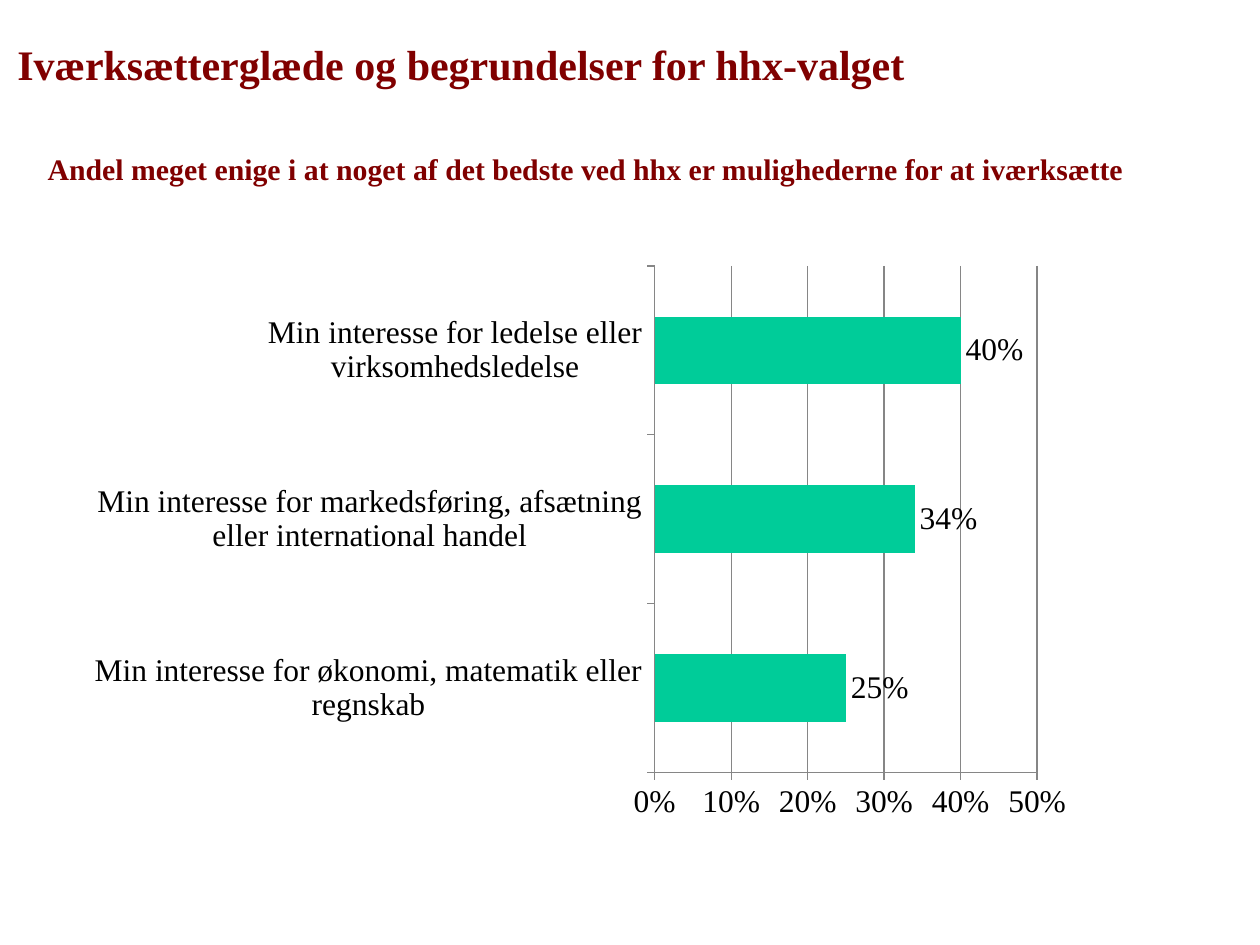
"""Build a slide with two headings and a bar chart of reasons for choosing hhx."""
from pptx import Presentation
from pptx.chart.data import CategoryChartData
from pptx.dml.color import RGBColor
from pptx.enum.chart import XL_CHART_TYPE, XL_LABEL_POSITION, XL_TICK_MARK
from pptx.util import Cm, Pt

FONT = "Times New Roman"
COLOURS = {"heading": "800000", "bar": "00CC99", "text": "000000", "line": "868686"}
HEADINGS = [
    ("Iværksætterglæde og begrundelser for hhx-valget", 24, (0.1, 0.66, 18.42, 1.27)),
    ("Andel meget enige i at noget af det bedste ved hhx er mulighederne for at iværksætte",
     17, (0.71, 2.92, 24.69, 1.7)),
]
REASONS = [
    ("Min interesse for økonomi, matematik eller regnskab", 0.25),
    ("Min interesse for markedsføring, afsætning eller international handel", 0.34),
    ("Min interesse for ledelse eller virksomhedsledelse", 0.40),
]
CHART_PLACE = (1.5, 5.13, 20.4, 11.61)


def colour(name):
    return RGBColor.from_string(COLOURS[name])


def style_font(font, size, name, bold=False):
    font.name, font.size, font.bold = FONT, Pt(size), bold
    font.color.rgb = colour(name)


def style_line(line):
    line.color.rgb = colour("line")
    line.width = Pt(0.75)


def add_heading(page, text, size, place):
    box = page.shapes.add_textbox(*map(Cm, place))
    box.text_frame.word_wrap = True
    paragraph = box.text_frame.paragraphs[0]
    paragraph.text = text
    style_font(paragraph.font, size, "heading", bold=True)


def add_reasons_chart(page):
    data = CategoryChartData(number_format="0%")
    data.categories = [reason for reason, share in REASONS]
    data.add_series("Series 1", [share for reason, share in REASONS])
    chart = page.shapes.add_chart(
        XL_CHART_TYPE.BAR_CLUSTERED, *map(Cm, CHART_PLACE), data).chart
    chart.has_legend = False
    chart.has_title = False
    style_font(chart.font, 18, "text")

    for axis in (chart.category_axis, chart.value_axis):
        axis.major_tick_mark = XL_TICK_MARK.OUTSIDE
        axis.minor_tick_mark = XL_TICK_MARK.NONE
        style_line(axis.format.line)
    values = chart.value_axis
    values.minimum_scale, values.maximum_scale, values.major_unit = 0, 0.5, 0.1
    values.has_major_gridlines = True
    style_line(values.major_gridlines.format.line)
    values.tick_labels.number_format = "0%"
    values.tick_labels.number_format_is_linked = False

    plot = chart.plots[0]
    plot.gap_width = 150
    plot.vary_by_categories = False
    bars = plot.series[0]
    bars.format.fill.solid()
    bars.format.fill.fore_color.rgb = colour("bar")
    labels = bars.data_labels
    labels.show_value = True
    labels.number_format = "0%"
    labels.number_format_is_linked = False
    labels.position = XL_LABEL_POSITION.OUTSIDE_END
    style_font(labels.font, 18, "text")


def main():
    deck = Presentation()
    deck.slide_width, deck.slide_height = Cm(25.4), Cm(19.05)
    page = deck.slides.add_slide(deck.slide_layouts[6])
    for heading in HEADINGS:
        add_heading(page, *heading)
    add_reasons_chart(page)
    deck.save("out.pptx")


if __name__ == "__main__":
    main()
